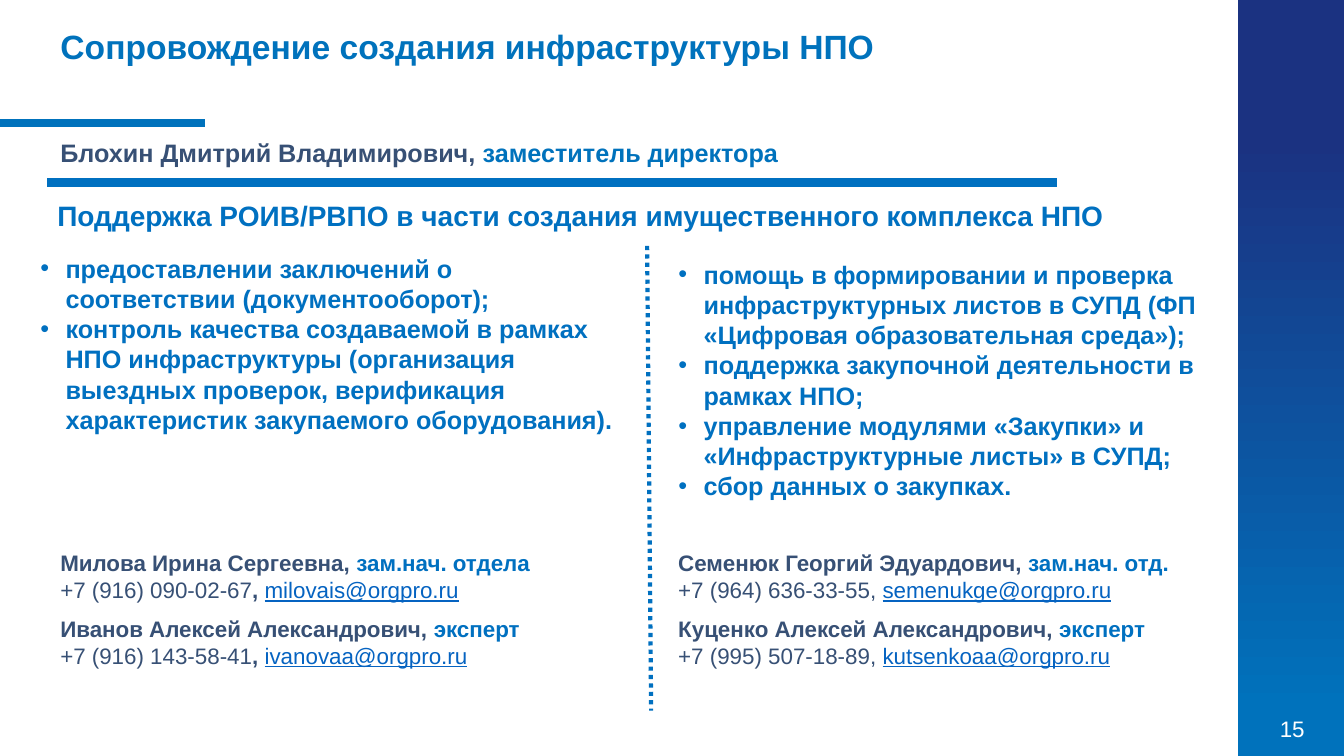
import pptx
import pptx.util
import pptx.dml.color
import pptx.enum.dml
import pptx.enum.shapes
import pptx.enum.text
import pptx.oxml
import pptx.oxml.ns

HUES = {"sky": "0072BC", "blue": "0070C0", "navy": "1B3281",
        "slate": "375075", "link": "0563C1", "white": "FFFFFF"}
WIDE, HIGH = pptx.util.Inches(13.333), pptx.util.Inches(7.5)
LEFT, RIGHT = 3.75, 49.73
ALIGN = pptx.enum.text.PP_ALIGN
ANCHOR = pptx.enum.text.MSO_ANCHOR

TASKS = [
    ((2.25, 32.8, 44.63, 32.4), [
        "предоставлении заключений о соответствии (документооборот);",
        "контроль качества создаваемой в рамках НПО инфраструктуры (организация "
        "выездных проверок, верификация характеристик закупаемого оборудования)."]),
    ((RIGHT, 33.6, 42.23, 34.4), [
        "помощь в формировании и проверка инфраструктурных листов в СУПД "
        "(ФП «Цифровая образовательная среда»);",
        "поддержка закупочной деятельности в рамках НПО;",
        "управление модулями «Закупки» и «Инфраструктурные листы» в СУПД;",
        "сбор данных о закупках."]),
]

STAFF = [
    [("Милова Ирина Сергеевна", "зам.нач. отдела", "+7 (916) 090-02-67", "milovais@orgpro.ru"),
     ("Иванов Алексей Александрович", "эксперт", "+7 (916) 143-58-41", "ivanovaa@orgpro.ru")],
    [("Семенюк Георгий Эдуардович", "зам.нач. отд.", "+7 (964) 636-33-55", "semenukge@orgpro.ru"),
     ("Куценко Алексей Александрович", "эксперт", "+7 (995) 507-18-89", "kutsenkoaa@orgpro.ru")],
]


def across(part):
    """Turn a percentage of the slide width into a length."""
    return int(WIDE * part / 100)


def down(part):
    """Turn a percentage of the slide height into a length."""
    return int(HIGH * part / 100)


def area(x, y, w, h):
    """Turn four percentages into left, top, width and height."""
    return across(x), down(y), across(w), down(h)


def tint(hue):
    """Return the named colour."""
    return pptx.dml.color.RGBColor.from_string(HUES[hue])


def apply(item, form):
    """Set each attribute named in a dict."""
    for name, value in form.items():
        setattr(item, name, value)


def write(para, text, size, hue, bold=True, under=False):
    """Add one formatted run to a paragraph."""
    run = para.add_run()
    run.text = text
    apply(run.font, {"name": "Arial", "size": pptx.util.Pt(size),
                     "bold": bold, "underline": under})
    run.font.color.rgb = tint(hue)


def frame(shape, place, anchor=ANCHOR.TOP):
    """Place a text shape and return its prepared text frame."""
    apply(shape, dict(zip(("left", "top", "width", "height"), area(*place))))
    apply(shape.text_frame, {"word_wrap": True, "vertical_anchor": anchor,
                             "auto_size": pptx.enum.text.MSO_AUTO_SIZE.NONE})
    return shape.text_frame


def label(slide, place, parts, size, align=ALIGN.LEFT, anchor=ANCHOR.TOP, pitch=None):
    """Add a one-paragraph text box made of coloured parts."""
    box = slide.shapes.add_textbox(*area(*place))
    para = frame(box, place, anchor).paragraphs[0]
    apply(para, {"alignment": align, "line_spacing": pitch})
    for text, hue in parts:
        write(para, text, size, hue)


def head(slide, text):
    """Fill the title placeholder."""
    para = frame(slide.shapes.title, (LEFT, 2.8, 78.8, 11.2)).paragraphs[0]
    para.alignment = ALIGN.LEFT
    write(para, text, 24, "sky")


def tasks(holder, place, items):
    """Fill a body placeholder with a bulleted list."""
    body = frame(holder, place)
    for spot, text in enumerate(items):
        para = body.add_paragraph() if spot else body.paragraphs[0]
        props = para._p.get_or_add_pPr()
        dent = pptx.util.Inches(0.25)
        props.set("marL", str(dent))
        props.set("indent", str(-dent))
        apply(para, {"space_before": pptx.util.Pt(0), "alignment": ALIGN.LEFT})
        mark = pptx.oxml.parse_xml(
            '<a:buChar %s char="•"/>' % pptx.oxml.ns.nsdecls("a"))
        props.append(mark)
        write(para, text, 18, "blue")


def person(slide, x, y, name, post, phone, mail, bold):
    """Add a contact: name and post above phone and mail."""
    place = (x, y, 38.5, 8.67)
    body = frame(slide.shapes.add_textbox(*area(*place)), place)
    top, low = body.paragraphs[0], body.add_paragraph()
    write(top, name + ", ", 16, "slate")
    write(top, post, 16, "blue")
    write(low, phone, 16, "slate", False)
    write(low, ", ", 16, "slate", bold)
    write(low, mail, 16, "link", False, True)


def rule(slide, start, end, hue, width, dash=None):
    """Draw a straight line between two points."""
    line = slide.shapes.add_connector(
        pptx.enum.shapes.MSO_CONNECTOR.STRAIGHT,
        across(start[0]), down(start[1]), across(end[0]), down(end[1]))
    line.line.color.rgb = tint(hue)
    apply(line.line, {"width": pptx.util.Pt(width), "dash_style": dash})
    line._element.spPr.append(pptx.oxml.parse_xml(
        "<a:effectLst %s/>" % pptx.oxml.ns.nsdecls("a")))


def panel(slide):
    """Draw the shaded band on the right edge."""
    band = slide.shapes.add_shape(
        pptx.enum.shapes.MSO_SHAPE.RECTANGLE, *area(92.1, 0, 7.9, 100))
    band.shadow.inherit = False
    band.line.fill.background()
    band.fill.gradient()
    band.fill.gradient_angle = 270
    for stop, (spot, hue) in zip(band.fill.gradient_stops, [(0.18, "navy"), (0.94, "sky")]):
        stop.position = spot
        stop.color.rgb = tint(hue)


def main():
    """Build the slide and save it."""
    deck = pptx.Presentation()
    apply(deck, {"slide_width": WIDE, "slide_height": HIGH})
    slide = deck.slides.add_slide(deck.slide_layouts[3])
    panel(slide)
    label(slide, (93.15, 93.6, 6, 5.47), [("15", "white")], 16, ALIGN.CENTER, ANCHOR.MIDDLE)
    slide.shapes[-1].text_frame.paragraphs[0].runs[0].font.bold = False
    rule(slide, (0, 16.27), (15.23, 16.27), "sky", 6)
    head(slide, "Сопровождение создания инфраструктуры НПО")
    label(slide, (LEFT, 18, 78, 10.4),
          [("Блохин Дмитрий Владимирович, ", "slate"), ("заместитель директора", "sky")],
          18, pitch=0.9)
    rule(slide, (3.53, 24.13), (78.68, 24.13), "blue", 6)
    label(slide, (3.53, 25.6, 80, 5.33),
          [("Поддержка РОИВ/РВПО в части создания имущественного комплекса НПО", "blue")], 20)
    for spot, (place, items) in enumerate(TASKS, 1):
        tasks(slide.placeholders[spot], place, items)
    rule(slide, (48.15, 32.53), (48.45, 94), "blue", 3,
         pptx.enum.dml.MSO_LINE.ROUND_DOT)
    for x, bold, team in zip((LEFT, RIGHT), (True, False), STAFF):
        for row, card in enumerate(team):
            person(slide, x, 72 + row * 8.67, *card, bold)
    deck.save("out.pptx")


if __name__ == "__main__":
    main()
